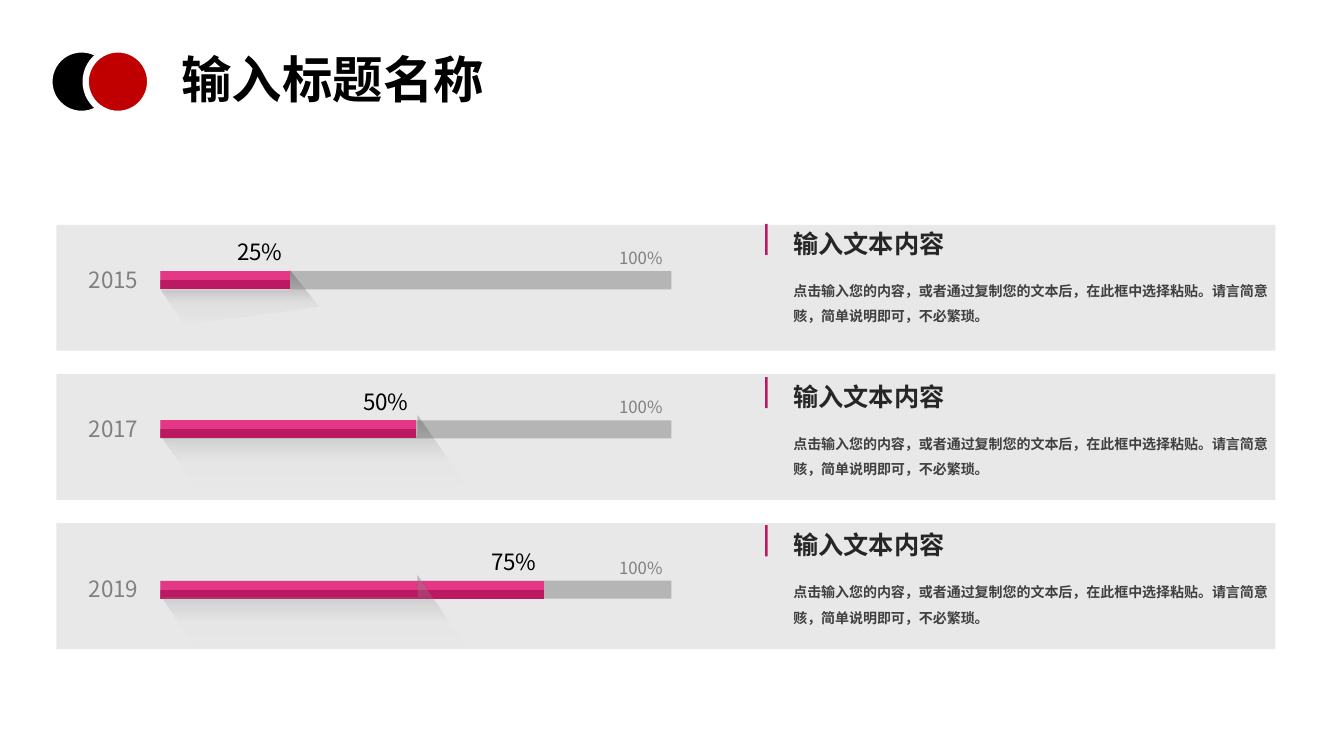
from lxml import etree
from pptx import Presentation
from pptx.dml.color import RGBColor
from pptx.enum.shapes import MSO_SHAPE
from pptx.enum.text import MSO_ANCHOR, MSO_AUTO_SIZE, PP_ALIGN
from pptx.oxml.ns import qn
from pptx.util import Inches, Pt

RECT, OVAL = MSO_SHAPE.RECTANGLE, MSO_SHAPE.OVAL
LEFT, RIGHT = PP_ALIGN.LEFT, PP_ALIGN.RIGHT
TOP, MIDDLE = MSO_ANCHOR.TOP, MSO_ANCHOR.MIDDLE
NO_FIT = MSO_AUTO_SIZE.NONE

CELL = Inches(0.1)
FONT = "Noto Sans CJK JP"
BLACK, GRAY, WHITE, RED = "000000", "808080", "FFFFFF", "C00000"
PINK, MAGENTA = "E43886", "BC1963"
BAR_STOPS = [(50, PINK, 100), (50, MAGENTA, 100)]
BAR_LEFT, BAR_HEIGHT, TRACK_WIDTH = 15.9, 1.8, 50.7

HEADING = "输入文本内容"
BODY = "点击输入您的内容，或者通过复制您的文本后，在此框中选择粘贴。请言简意赅，简单说明即可，不必繁琐。"

SHORT_SHADOW = [(15.7, 3.5), (12.8, -0.1), (12.8, 1.9), (0.1, 1.9), (2.4, 5.3)]
LONG_SHADOW = [(30.3, 6.4), (25.5, -0.5), (25.5, 1.6), (0.1, 1.6), (3.9, 7.2)]
SHORT_FADE = [(0, GRAY, 80), (59, "969696", 10), (100, GRAY, 0)]
LONG_FADE = [(0, GRAY, 48), (61, "969696", 1), (100, GRAY, 0)]

ROWS = [
    ("2015", "25%", 26.9, 12.9, 22.5, SHORT_SHADOW, SHORT_FADE, ("track", "shadow", "bar")),
    ("2017", "50%", 41.7, 25.4, 37.7, LONG_SHADOW, LONG_FADE, ("shadow", "track", "bar")),
    ("2019", "75%", 57.6, 38.1, 52.4, LONG_SHADOW, LONG_FADE, ("track", "bar", "shadow")),
]


def grid(n):
    return round(n * CELL)


def rgb(value):
    return RGBColor.from_string(value)


def set_alpha(color, alpha):
    if alpha < 100:
        etree.SubElement(color, qn("a:alpha"), val=str(alpha * 1000))


def write(sp, text, size=16, color=BLACK, bold=False, align=LEFT, anchor=TOP,
          spacing=1.0, wrap=True):
    tf = sp.text_frame
    tf.word_wrap = wrap
    tf.auto_size = NO_FIT
    tf.vertical_anchor = anchor
    p = tf.paragraphs[0]
    p.alignment = align
    p.line_spacing = spacing
    r = p.add_run()
    r.text = text
    r.font.size = Pt(size)
    r.font.bold = bold
    r.font.name = FONT
    r.font.color.rgb = rgb(color)
    etree.SubElement(r.font._element, qn("a:ea"), typeface=FONT)


class Board:
    def __init__(self, prs):
        self.slide = prs.slides.add_slide(prs.slide_layouts[5])
        self.shapes = self.slide.shapes

    def title(self, text, x, y, w, h, **style):
        sp = self.shapes.title
        sp.left, sp.top, sp.width, sp.height = map(grid, (x, y, w, h))
        write(sp, text, **style)

    def finish(self, sp, color=None, alpha=100, stops=None, line=None):
        sp.shadow.inherit = False
        if stops:
            sp.fill.gradient()
            sp.fill.gradient_angle = 270
            gs_list = sp.element.spPr.find(".//" + qn("a:gsLst"))
            for gs in list(gs_list):
                gs_list.remove(gs)
            for pos, value, opacity in stops:
                gs = etree.SubElement(gs_list, qn("a:gs"), pos=str(pos * 1000))
                set_alpha(etree.SubElement(gs, qn("a:srgbClr"), val=value), opacity)
        else:
            sp.fill.solid()
            sp.fill.fore_color.rgb = rgb(color)
            set_alpha(sp.element.spPr.find(".//" + qn("a:srgbClr")), alpha)
        if line:
            sp.line.color.rgb = rgb(line)
            sp.line.width = Pt(4.5)
        else:
            sp.line.fill.background()

    def shape(self, kind, x, y, w, h, **style):
        sp = self.shapes.add_shape(kind, *map(grid, (x, y, w, h)))
        self.finish(sp, **style)

    def polygon(self, x, y, points, **style):
        corners = [(grid(x + dx), grid(y + dy)) for dx, dy in points]
        builder = self.shapes.build_freeform(*corners[0])
        builder.add_line_segments(corners[1:], close=True)
        self.finish(builder.convert_to_shape(), **style)

    def text(self, text, x, y, w, h, **style):
        write(self.shapes.add_textbox(*map(grid, (x, y, w, h))), text, **style)

    def progress(self, year, percent, top, width, shadow, fade, layers):
        for layer in layers:
            if layer == "track":
                self.shape(RECT, BAR_LEFT, top, TRACK_WIDTH, BAR_HEIGHT, color=BLACK, alpha=22)
            elif layer == "bar":
                self.shape(RECT, BAR_LEFT, top, width, BAR_HEIGHT, stops=BAR_STOPS)
            else:
                self.polygon(BAR_LEFT, top, shadow, stops=fade)
        label = dict(align=RIGHT, anchor=MIDDLE, wrap=False)
        self.text(year, 6.9, top - 1.5, 7.8, 4.6, color=GRAY, **label)
        self.text(percent, BAR_LEFT + width - 7.6, top - 3.75, 7.8, 3.7, **label)
        self.text("100%", 58.9, top - 2.55, 7.8, 2.5, size=12, color=GRAY, **label)

    def caption(self, top):
        self.shape(RECT, 75.9, top - 0.3, 0.25, 3.1, color=MAGENTA)
        self.text(HEADING, 77.7, top, 26.3, 4, size=18, color="262626", bold=True, spacing=0.9)
        self.text(BODY, 77.7, top + 4.2, 50, 6.1, size=10, color="404040", bold=True, spacing=1.5)


def main():
    prs = Presentation()
    prs.slide_width, prs.slide_height = Inches(13.33), Inches(7.5)
    board = Board(prs)
    board.title("输入标题名称", 17, 4.3, 35.4, 7.1, size=36, bold=True)
    for x, color in ((4.9, BLACK), (8.5, RED)):
        board.shape(OVAL, x, 4.9, 6.4, 6.4, color=color, line=WHITE)
    for i, (year, percent, top, width, heading_top, shadow, fade, layers) in enumerate(ROWS):
        board.shape(RECT, 5.6, 22.3 + 14.8 * i, 120.9, 12.5, color="232325", alpha=10)
        board.progress(year, percent, top, width, shadow, fade, layers)
        board.caption(heading_top)
    prs.save("out.pptx")


if __name__ == "__main__":
    main()
